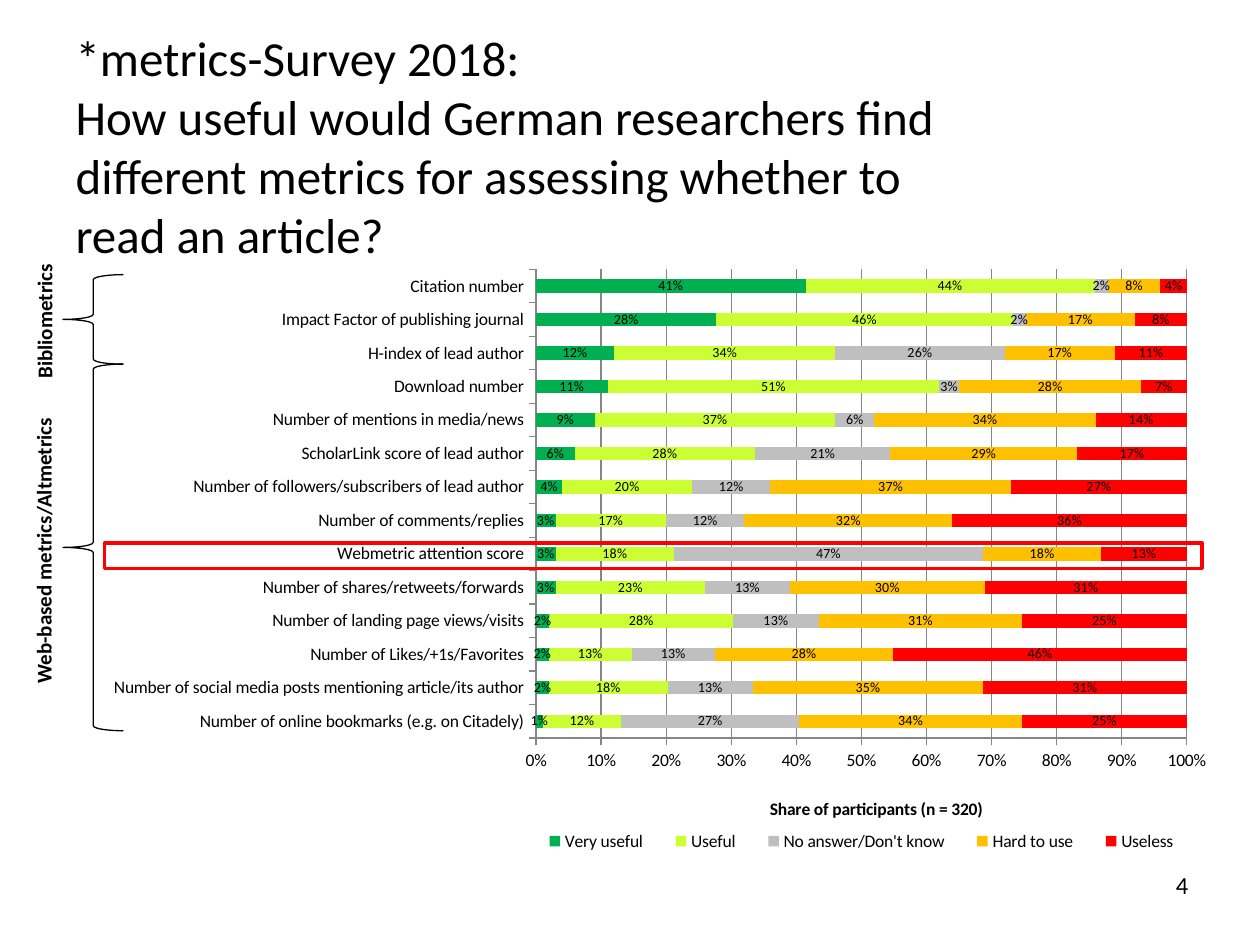
from lxml import etree
from pptx import Presentation, util as u
from pptx.chart.data import CategoryChartData
from pptx.dml.color import RGBColor
from pptx.enum import chart as kinds, shapes, text as t


def paint(part, colour):
    part.solid()
    part.fore_color.rgb = RGBColor.from_string(colour)


def write(frame, text, size, bold=False, align=t.PP_ALIGN.LEFT, anchor=t.MSO_ANCHOR.MIDDLE, wrap=True):
    frame.text = text
    frame.word_wrap = wrap
    frame.auto_size = t.MSO_AUTO_SIZE.NONE
    frame.vertical_anchor = anchor
    for para in frame.paragraphs:
        para.alignment = align
        for span in para.runs:
            span.font.name = "Calibri"
            span.font.size = u.Pt(size)
            span.font.bold = bold
            paint(span.font.fill, "000000")


deck = Presentation()
deck.slide_width, deck.slide_height = u.Inches(10), u.Inches(7.5)
page = deck.slides.add_slide(deck.slide_layouts[5])

column, row = deck.slide_width / 100, deck.slide_height / 100
shares = {
    "title": (5, 7.07, 72.6, 16.67),
    "chart": (-9.1, 25.87, 107.6, 66.13),
    "number": (72, 90.93, 23.3, 5.33),
    "bibliometrics brace": (5, 29.07, 4.8, 9.47),
    "altmetrics brace": (5, 38.53, 4.8, 38.8),
    "bibliometrics": (-2.1, 32, 11.2, 4),
    "altmetrics": (-8.2, 56.27, 23.3, 4),
    "highlight": (8.3, 57.47, 87.1, 2.67),
}
areas = {
    name: [round(share * unit) for share, unit in zip(area, (column, row) * 2)]
    for name, area in shares.items()
}

title = page.shapes.title
title.left, title.top, title.width, title.height = areas["title"]
write(
    title.text_frame,
    "*metrics-Survey 2018:\vHow useful would German researchers find "
    "different metrics for assessing whether to read an article?",
    size=28,
)

answers = {
    "Very useful": ("00B050", (1, 2, 2, 2, 3, 3, 3, 4, 6, 9, 11, 12, 28, 41)),
    "Useful": ("CCFF33", (12, 18, 13, 28, 23, 18, 17, 20, 28, 37, 51, 34, 46, 44)),
    "No answer/Don't know": ("BFBFBF", (27, 13, 13, 13, 13, 47, 12, 12, 21, 6, 3, 26, 2, 2)),
    "Hard to use": ("FFC000", (34, 35, 28, 31, 30, 18, 32, 37, 29, 34, 28, 17, 17, 8)),
    "Useless": ("FF0000", (25, 31, 46, 25, 31, 13, 36, 27, 17, 14, 7, 11, 8, 4)),
}
data = CategoryChartData(number_format="0%")
data.categories = [
    "Number of online bookmarks (e.g. on Citadely)",
    "Number of social media posts mentioning article/its author",
    "Number of Likes/+1s/Favorites",
    "Number of landing page views/visits",
    "Number of shares/retweets/forwards",
    "Webmetric attention score",
    "Number of comments/replies",
    "Number of followers/subscribers of lead author",
    "ScholarLink score of lead author",
    "Number of mentions in media/news",
    "Download number",
    "H-index of lead author",
    "Impact Factor of publishing journal",
    "Citation number",
]
for name, (colour, percents) in answers.items():
    data.add_series(name, [percent / 100 for percent in percents])

chart = page.shapes.add_chart(
    kinds.XL_CHART_TYPE.BAR_STACKED_100, *areas["chart"], data
).chart
chart.has_title = False
chart.font.name = "Calibri"
chart.font.size = u.Pt(10)
paint(chart.font.fill, "000000")

plot = chart.plots[0]
plot.gap_width, plot.overlap = 150, 100
plot.vary_by_categories = False
for series in plot.series:
    paint(series.format.fill, answers[series.name][0])
    series.invert_if_negative = False
    labels = series.data_labels
    labels.show_value = True
    labels.number_format, labels.number_format_is_linked = "0%", False
    labels.font.name = "Calibri"
    labels.font.size = u.Pt(8)
    paint(labels.font.fill, "000000")

values = chart.value_axis
values.minimum_scale, values.maximum_scale, values.major_unit = 0, 1, 0.1
values.tick_labels.number_format = "0%"
values.tick_labels.number_format_is_linked = False
values.has_major_gridlines = True
for line in (values.major_gridlines.format.line, values.format.line, chart.category_axis.format.line):
    paint(line.fill, "868686")
    line.width = u.Pt(0.75)
for axis in (values, chart.category_axis):
    axis.major_tick_mark = kinds.XL_TICK_MARK.OUTSIDE
write(values.axis_title.text_frame, "Share of participants (n = 320)", size=10, bold=True)

chart.has_legend = True
chart.legend.position = kinds.XL_LEGEND_POSITION.BOTTOM
chart.legend.include_in_layout = False

space = "{http://schemas.openxmlformats.org/drawingml/2006/chart}"
plot_area = chart._chartSpace.chart.plotArea
legend, axis_title = chart.legend._element, values.axis_title._element
for part, index, settings in (
    (plot_area, 0, dict(layoutTarget="inner", xMode="edge", yMode="edge", x=0.48, y=0.04, w=0.48, h=0.75)),
    (legend, 1, dict(xMode="edge", yMode="edge", x=0.47, y=0.93, w=0.5, h=0.05)),
    (axis_title, 1, dict(xMode="edge", yMode="edge", x=0.65, y=0.88)),
):
    for former in part.findall(space + "layout"):
        part.remove(former)
    layout = etree.Element(space + "layout")
    manual = etree.SubElement(layout, space + "manualLayout")
    for key, setting in settings.items():
        etree.SubElement(manual, space + key, val=str(setting))
    part.insert(index, layout)

number = page.shapes.add_textbox(*areas["number"])
write(number.text_frame, "4", size=14, align=t.PP_ALIGN.RIGHT)

for name, preset, colour, width in (
    ("bibliometrics brace", shapes.MSO_SHAPE.LEFT_BRACE, "000000", 0.75),
    ("altmetrics brace", shapes.MSO_SHAPE.LEFT_BRACE, "000000", 0.75),
    ("highlight", shapes.MSO_SHAPE.RECTANGLE, "FF0000", 2),
):
    outline = page.shapes.add_shape(preset, *areas[name])
    outline.shadow.inherit = False
    outline.fill.background()
    paint(outline.line.fill, colour)
    outline.line.width = u.Pt(width)

for name, text in (
    ("bibliometrics", "Bibliometrics"),
    ("altmetrics", "Web-based metrics/Altmetrics"),
):
    box = page.shapes.add_textbox(*areas[name])
    box.rotation = 270
    write(box.text_frame, text, size=12, bold=True, align=t.PP_ALIGN.CENTER, anchor=t.MSO_ANCHOR.TOP, wrap=False)

deck.save("out.pptx")
